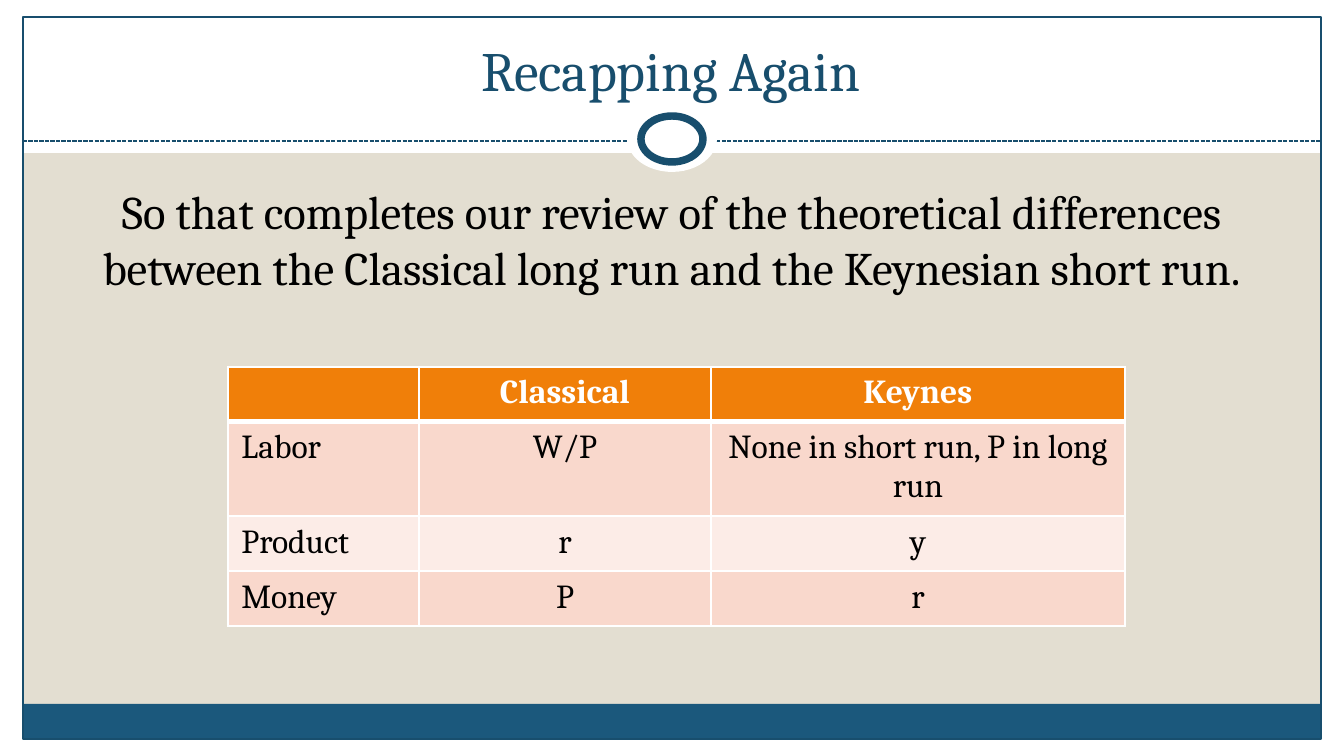
"""Build the "Recapping Again" slide with its comparison table."""
from dataclasses import dataclass
from typing import Optional

from lxml.etree import SubElement
from pptx import Presentation
from pptx.dml.color import RGBColor
from pptx.enum.dml import MSO_LINE
from pptx.enum.shapes import MSO_CONNECTOR, MSO_SHAPE
from pptx.enum.text import MSO_ANCHOR, MSO_AUTO_SIZE, PP_ALIGN
from pptx.oxml.ns import qn
from pptx.slide import Slide
from pptx.table import _Cell
from pptx.text.text import TextFrame
from pptx.util import Emu, Pt

W, H = 1344, 756
EMU_PER_PX = 914400 / 134.4


@dataclass(frozen=True)
class Theme:
    font: str = "Cambria"
    paper: str = "E3DED1"
    white: str = "FFFFFF"
    black: str = "000000"
    navy: str = "184E6D"
    footer: str = "1B587C"
    header: str = "F07F09"
    bands: tuple = ("F9D8CC", "FCECE7")
    title_size: float = 29.7
    body_size: float = 25
    table_size: float = 18
    thin: float = 0.75
    ring: float = 4
    grid: float = 1
    header_rule: float = 3


@dataclass(frozen=True)
class Panel:
    x: int
    y: int
    w: int
    h: int
    fill: Optional[str] = None
    line: Optional[str] = None
    weight: float = 0
    kind: MSO_SHAPE = MSO_SHAPE.RECTANGLE


T = Theme()
OVAL = MSO_SHAPE.OVAL
BANDS = (
    Panel(0, 739, W, 17, T.white),
    Panel(0, 0, W, 153, T.white),
    Panel(0, 0, 23, H, T.white),
    Panel(1321, 0, 23, H, T.white),
    Panel(22, 704, 1298, 34, T.footer),
    Panel(23, 17, 1298, 722, line=T.navy, weight=T.thin),
)
RINGS = (
    Panel(627, 105, 90, 67, T.white, kind=OVAL),
    Panel(641, 116, 62, 46, T.white, T.navy, T.ring, OVAL),
)
BODY = ("So that completes our review of the theoretical differences "
        "between the Classical long run and the Keynesian short run.")
ROWS = (
    ("", "Classical", "Keynes"),
    ("Labor", "W/P", "None in short run, P in long run"),
    ("Product", "r", "y"),
    ("Money", "P", "r"),
)
COLUMNS = (191, 292, 414)
ROW_HEIGHT = 55


def px(n: int) -> Emu:
    """Turn pixels into EMU."""
    return Emu(round(n * EMU_PER_PX))


def box(*lengths: int) -> list[Emu]:
    """Turn several pixel lengths into EMU."""
    return [px(n) for n in lengths]


def rgb(color: str) -> RGBColor:
    """Read a hexadecimal colour."""
    return RGBColor.from_string(color)


def draw_panel(s: Slide, panel: Panel) -> None:
    """Draw one flat shape."""
    sp = s.shapes.add_shape(panel.kind, *box(panel.x, panel.y, panel.w, panel.h))
    sp.shadow.inherit = False
    if panel.fill:
        sp.fill.solid()
        sp.fill.fore_color.rgb = rgb(panel.fill)
    else:
        sp.fill.background()
    if panel.line:
        sp.line.color.rgb = rgb(panel.line)
        sp.line.width = Pt(panel.weight)
    else:
        sp.line.fill.background()


def draw_divider(s: Slide, y: int) -> None:
    """Draw the dashed rule across the frame."""
    line = s.shapes.add_connector(MSO_CONNECTOR.STRAIGHT, *box(23, y, 1321, y))
    line.line.color.rgb = rgb(T.navy)
    line.line.width = Pt(T.thin)
    line.line.dash_style = MSO_LINE.SQUARE_DOT
    SubElement(line.element.spPr, qn("a:effectLst"))


def write(tf: TextFrame, text: str, size: float, color: str,
          align: PP_ALIGN = PP_ALIGN.CENTER, bold: bool = False) -> None:
    """Write one formatted paragraph."""
    p = tf.paragraphs[0]
    p.alignment = align
    r = p.add_run()
    r.text = text
    for name, value in {"name": T.font, "size": Pt(size), "bold": bold}.items():
        setattr(r.font, name, value)
    r.font.color.rgb = rgb(color)


def place_title(s: Slide) -> None:
    """Move the title in front of the bands and format it."""
    sp = s.shapes.title
    for name, value in zip(("left", "top", "width", "height"), box(44, 26, 1254, 83)):
        setattr(sp, name, value)
    tf = sp.text_frame
    for name, value in {"vertical_anchor": MSO_ANCHOR.BOTTOM, "word_wrap": True,
                        "auto_size": MSO_AUTO_SIZE.NONE}.items():
        setattr(tf, name, value)
    write(tf, "Recapping Again", T.title_size, T.navy)
    sp.element.getparent().append(sp.element)


def place_body(s: Slide) -> None:
    """Add the summary sentence."""
    tf = s.shapes.add_textbox(*box(44, 176, 1255, 168)).text_frame
    tf.word_wrap = True
    write(tf, BODY, T.body_size, T.black)
    tf.paragraphs[0].space_before = Pt(T.body_size * 0.2)


def set_borders(cell: _Cell, row: int) -> None:
    """Give a cell white borders, heavier under the header."""
    tcPr = cell._tc.get_or_add_tcPr()
    weights = {"L": T.grid, "R": T.grid,
               "T": T.header_rule if row == 1 else T.grid,
               "B": T.header_rule if row == 0 else T.grid}
    for side, weight in weights.items():
        ln = SubElement(tcPr, qn(f"a:ln{side}"), w=str(Pt(weight)))
        fill = SubElement(ln, qn("a:solidFill"))
        SubElement(fill, qn("a:srgbClr"), val=T.white)


def draw_table(s: Slide) -> None:
    """Add the table of markets by theory."""
    size = box(228, 367, sum(COLUMNS), ROW_HEIGHT * len(ROWS))
    table = s.shapes.add_table(len(ROWS), len(COLUMNS), *size).table
    for column, width in zip(table.columns, COLUMNS):
        column.width = px(width)
    for i, row in enumerate(ROWS):
        table.rows[i].height = px(ROW_HEIGHT)
        head = i == 0
        for j, text in enumerate(row):
            cell = table.cell(i, j)
            set_borders(cell, i)
            cell.fill.solid()
            cell.fill.fore_color.rgb = rgb(T.header if head else T.bands[(i - 1) % 2])
            if text:
                write(cell.text_frame, text, T.table_size, T.white if head else T.black,
                      PP_ALIGN.CENTER if j else PP_ALIGN.LEFT, head)


def main() -> None:
    """Build and save the presentation."""
    prs = Presentation()
    prs.slide_width, prs.slide_height = box(W, H)
    s = prs.slides.add_slide(prs.slide_layouts[5])
    s.background.fill.solid()
    s.background.fill.fore_color.rgb = rgb(T.paper)
    for panel in BANDS:
        draw_panel(s, panel)
    draw_divider(s, 141)
    for ring in RINGS:
        draw_panel(s, ring)
    place_title(s)
    place_body(s)
    draw_table(s)
    prs.save("out.pptx")


if __name__ == "__main__":
    main()
